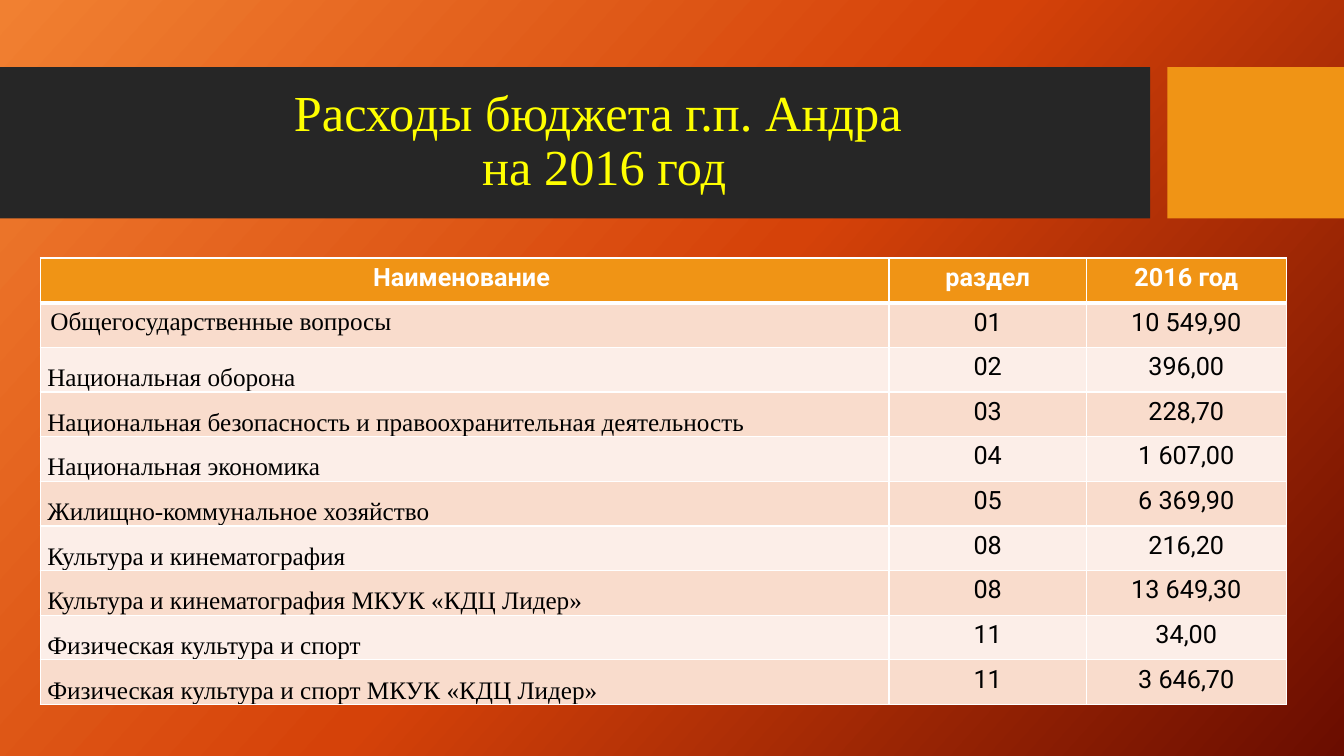
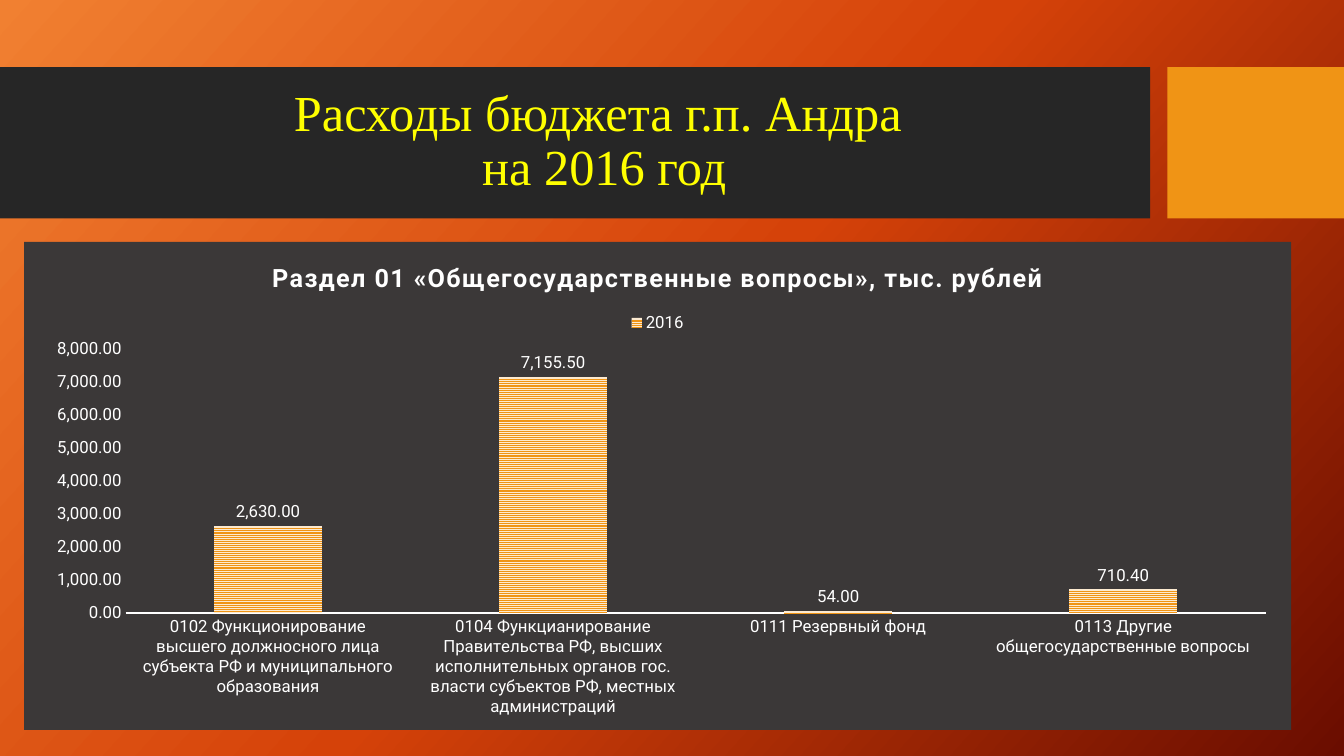
import copy
import dataclasses

import lxml.etree
import pptx
import pptx.chart.data
import pptx.dml.color
import pptx.enum.chart
import pptx.enum.dml
import pptx.enum.shapes
import pptx.enum.text
import pptx.oxml.ns
import pptx.util

Pt = pptx.util.Pt
qn = pptx.oxml.ns.qn
SubElement = lxml.etree.SubElement
Align = pptx.enum.text.PP_ALIGN
Anchor = pptx.enum.text.MSO_ANCHOR


def rgb(value):
    return pptx.dml.color.RGBColor.from_string(value)


@dataclasses.dataclass(frozen=True)
class Theme:
    gradient: tuple = ((0, "F18031"), (0.5, "D54209"), (1, "6A0D00"))
    gradient_angle: int = 42
    band: str = "262626"
    accent: str = "F09415"
    accent_pale: str = "FCEAD0"
    title: str = "FFFF00"
    light: str = "FFFFFF"
    dark: str = "000000"
    row_fills: tuple = ("F9DCCC", "FCEEE8")
    chart_fill: str = "3B3838"
    serif: str = "Times New Roman"
    sans: str = "Roboto"
    title_size: int = 36
    body_size: int = 18
    chart_size: int = 12


class Deck:
    def __init__(self, theme):
        self.theme = theme
        self.presentation = pptx.Presentation()
        self.presentation.slide_width = Pt(960)
        self.presentation.slide_height = Pt(540)
        self.layout = self.presentation.slide_layouts[5]
        self.slide = None
        self.set_background()

    def set_background(self):
        master = self.presentation.slide_master
        fill = master.background.fill
        fill.gradient()
        fill.gradient_angle = 360 - self.theme.gradient_angle
        stops = master.element.xpath(".//p:bg//a:gsLst")[0]
        stops.append(copy.deepcopy(stops[-1]))
        for stop, (position, color) in zip(fill.gradient_stops, self.theme.gradient):
            stop.position = position
            stop.color.rgb = rgb(color)

    def add_layout_band(self, left, width, color, shape_id):
        shape = self.slide.shapes.add_shape(
            pptx.enum.shapes.MSO_SHAPE.RECTANGLE, Pt(left), Pt(48), Pt(width), Pt(108))
        shape.shadow.inherit = False
        shape.fill.solid()
        shape.fill.fore_color.rgb = rgb(color)
        shape.line.fill.background()
        shape.element.nvSpPr.cNvPr.set("id", str(shape_id))
        self.layout.shapes.element.insert(2, shape.element)

    def format_font(self, font, name, size, color, bold=False):
        font.name = name
        font.size = Pt(size)
        font.bold = bold
        font.color.rgb = rgb(color)

    def add_slide(self, title):
        theme = self.theme
        first = self.slide is None
        self.slide = self.presentation.slides.add_slide(self.layout)
        if first:
            self.add_layout_band(0, 821.5, theme.band, 101)
            self.add_layout_band(833.8, 126.2, theme.accent, 102)
        shape = self.slide.shapes.title
        shape.left, shape.top, shape.width, shape.height = Pt(53.3), Pt(59), Pt(756.7), Pt(85)
        text_frame = shape.text_frame
        text_frame.text = title
        text_frame.vertical_anchor = Anchor.MIDDLE
        paragraph = text_frame.paragraphs[0]
        paragraph.alignment = Align.CENTER
        paragraph.line_spacing = 0.9
        for run in paragraph.runs:
            self.format_font(run.font, theme.serif, theme.title_size, theme.title)

    def add_borders(self, cell, top, bottom):
        properties = cell._tc.get_or_add_tcPr()
        for side, width in (("L", 1), ("R", 1), ("T", top), ("B", bottom)):
            line = SubElement(properties, qn(f"a:ln{side}"), w=str(Pt(width)))
            fill = SubElement(line, qn("a:solidFill"))
            SubElement(fill, qn("a:srgbClr"), val=self.theme.light)

    def format_cell(self, cell, text, row, column):
        theme = self.theme
        header = row == 0
        name_cell = column == 0 and not header
        self.add_borders(cell, 3 if row == 1 else 1, 3 if header else 1)
        cell.fill.solid()
        cell.fill.fore_color.rgb = rgb(theme.accent if header else theme.row_fills[(row - 1) % 2])
        if name_cell and row > 1:
            cell.vertical_anchor = Anchor.BOTTOM
            cell.margin_left = cell.margin_right = Pt(5)
            cell.margin_top = cell.margin_bottom = 0
        cell.text_frame.text = text
        paragraph = cell.text_frame.paragraphs[0]
        paragraph.alignment = Align.LEFT if name_cell else Align.CENTER
        self.format_font(paragraph.runs[0].font, theme.serif if name_cell else theme.sans,
                         theme.body_size, theme.light if header else theme.dark, header)

    def add_table(self, rows, left, top, widths, row_height):
        table = self.slide.shapes.add_table(
            len(rows), len(widths), Pt(left), Pt(top),
            Pt(sum(widths)), Pt(row_height * len(rows))).table
        for column, width in zip(table.columns, widths):
            column.width = Pt(width)
        for row_index, row in enumerate(rows):
            table.rows[row_index].height = Pt(row_height)
            for column_index, text in enumerate(row):
                self.format_cell(table.cell(row_index, column_index), text,
                                 row_index, column_index)

    def add_column_chart(self, title, series_name, values, box, plot_box):
        theme = self.theme
        number_format = "#,##0.00"
        data = pptx.chart.data.CategoryChartData(number_format=number_format)
        data.categories = list(values)
        data.add_series(series_name, list(values.values()))
        chart = self.slide.shapes.add_chart(
            pptx.enum.chart.XL_CHART_TYPE.COLUMN_CLUSTERED,
            *(Pt(length) for length in box), data).chart
        self.format_font(chart.font, theme.sans, theme.chart_size, theme.light)
        self.fill_chart(chart)
        self.place_plot(chart, plot_box)

        chart.has_title = True
        chart.chart_title.text_frame.text = title
        run = chart.chart_title.text_frame.paragraphs[0].runs[0]
        self.format_font(run.font, theme.sans, theme.body_size, theme.light, True)
        run._r.get_or_add_rPr().set("spc", "100")

        chart.has_legend = True
        chart.legend.position = pptx.enum.chart.XL_LEGEND_POSITION.TOP
        chart.legend.include_in_layout = False
        self.format_font(chart.legend.font, theme.sans, theme.chart_size, theme.light)

        for axis in (chart.category_axis, chart.value_axis):
            axis.has_major_gridlines = False
            axis.major_tick_mark = pptx.enum.chart.XL_TICK_MARK.NONE
            axis.minor_tick_mark = pptx.enum.chart.XL_TICK_MARK.NONE
            self.format_font(axis.tick_labels.font, theme.sans, theme.chart_size, theme.light)
        chart.category_axis.format.line.width = Pt(1.5)
        chart.category_axis.format.line.color.rgb = rgb(theme.light)
        chart.value_axis.format.line.fill.background()
        chart.value_axis.tick_labels.number_format = number_format
        chart.value_axis.tick_labels.number_format_is_linked = False

        plot = chart.plots[0]
        plot.vary_by_categories = False
        plot.gap_width = 164
        plot.overlap = -22
        fill = plot.series[0].format.fill
        fill.patterned()
        fill.pattern = pptx.enum.dml.MSO_PATTERN.NARROW_HORIZONTAL
        fill.fore_color.rgb = rgb(theme.accent)
        fill.back_color.rgb = rgb(theme.accent_pale)
        plot.has_data_labels = True
        labels = plot.data_labels
        labels.show_value = True
        labels.position = pptx.enum.chart.XL_LABEL_POSITION.OUTSIDE_END
        labels.number_format = number_format
        labels.number_format_is_linked = False
        self.format_font(labels.font, theme.sans, theme.chart_size, theme.light)

    def fill_chart(self, chart):
        space = chart.element
        properties = SubElement(space, qn("c:spPr"))
        fill = SubElement(properties, qn("a:solidFill"))
        SubElement(fill, qn("a:srgbClr"), val=self.theme.chart_fill)
        line = SubElement(properties, qn("a:ln"))
        SubElement(line, qn("a:noFill"))
        space.find(qn("c:chart")).addnext(properties)

    def place_plot(self, chart, plot_box):
        plot_area = chart.element.find(qn("c:chart")).find(qn("c:plotArea"))
        for layout in plot_area.findall(qn("c:layout")):
            plot_area.remove(layout)
        layout = SubElement(plot_area, qn("c:layout"))
        manual = SubElement(layout, qn("c:manualLayout"))
        settings = [("layoutTarget", "inner"), ("xMode", "edge"), ("yMode", "edge")]
        settings += zip("xywh", plot_box)
        for name, value in settings:
            SubElement(manual, qn(f"c:{name}"), val=str(value))
        plot_area.insert(0, layout)


def main():
    deck = Deck(Theme())
    title = "Расходы бюджета г.п. Андра \vна 2016 год"

    deck.add_slide(title)
    expenses = [
        ("Наименование ", "раздел", "2016 год"),
        ("Общегосударственные вопросы", "01", "10 549,90"),
        ("Национальная оборона", "02", "396,00"),
        ("Национальная безопасность и правоохранительная деятельность", "03", "228,70"),
        ("Национальная экономика", "04", "1 607,00"),
        ("Жилищно-коммунальное хозяйство", "05", "6 369,90"),
        ("Культура и кинематография", "08", "216,20"),
        ("Культура и кинематография МКУК «КДЦ Лидер»", "08", "13 649,30"),
        ("Физическая культура и спорт", "11", "34,00"),
        ("Физическая культура и спорт МКУК «КДЦ Лидер»", "11", "3 646,70"),
    ]
    deck.add_table(expenses, 28.8, 184.3, (606.2, 141.1, 142.6), 31.9)

    deck.add_slide(title)
    general_expenses = {
        "0102 Функционирование высшего должносного лица субъекта РФ "
        "и муниципального образования": 2630,
        "0104 Функцианирование Правительства РФ, высших исполнительных органов гос. "
        "власти субъектов РФ, местных администраций": 7155.5,
        "0111 Резервный фонд": 54,
        "0113 Другие общегосударственные вопросы": 710.4,
    }
    deck.add_column_chart(
        "Раздел 01 «Общегосударственные вопросы», тыс. рублей", "2016", general_expenses,
        box=(17.3, 172.8, 905, 348.5), plot_box=(0.08, 0.22, 0.9, 0.54))

    deck.presentation.save("out.pptx")


if __name__ == "__main__":
    main()
